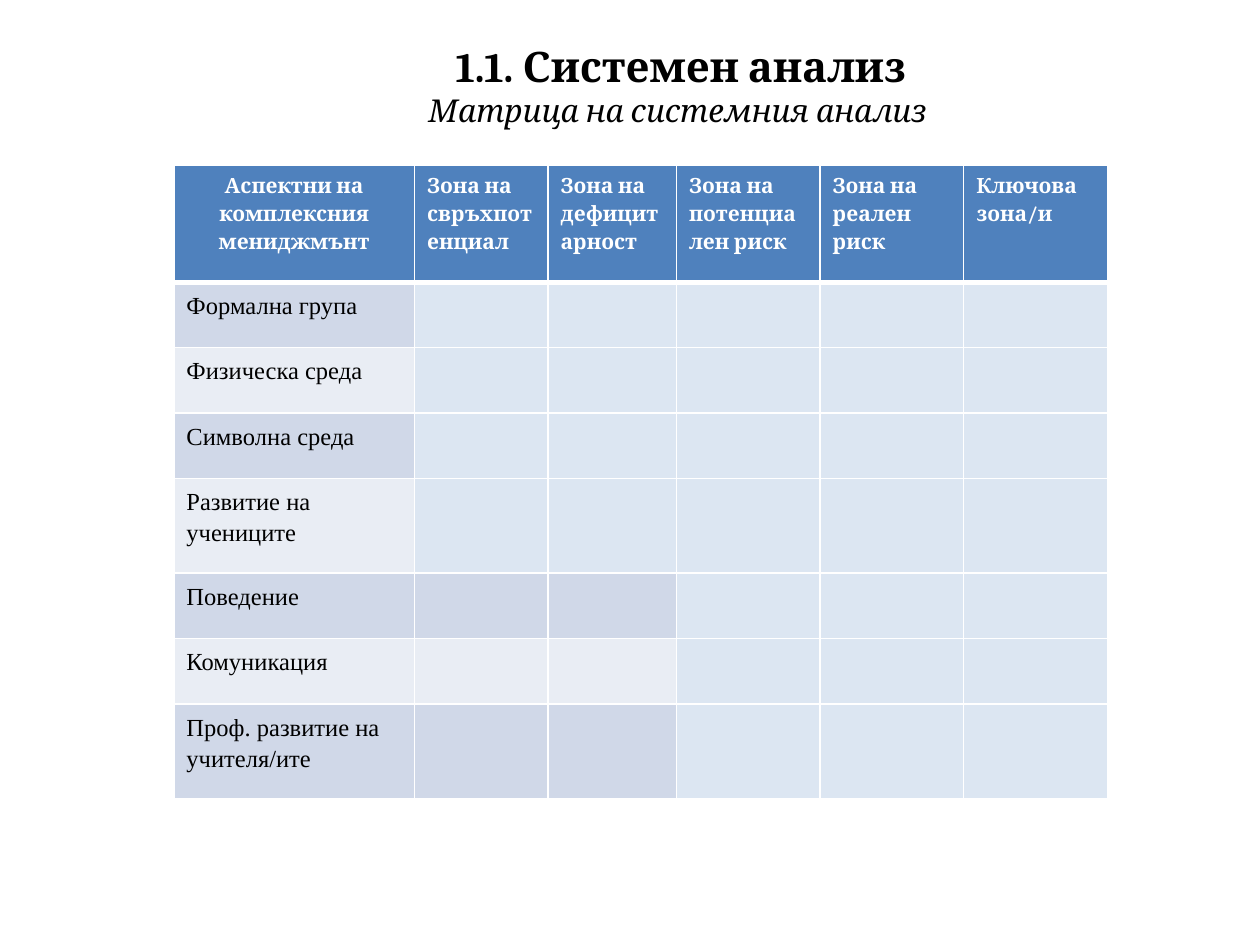
from lxml import etree
from pptx import Presentation
from pptx.dml.color import RGBColor
from pptx.enum import text
from pptx.oxml.ns import qn
from pptx.util import Inches, Pt

HEADS = ["Аспектни на комплексния мениджмънт", "Зона на свръхпотенциал",
         "Зона на дефицитарност", "Зона на потенциален риск",
         "Зона на реален риск", "Ключова зона/и"]
ASPECTS = ["Формална група", "Физическа среда", "Символна среда",
           "Развитие на\nучениците", "Поведение", "Комуникация",
           "Проф. развитие на учителя/ите"]
WIDTHS = [1.91, 1.06, 1.02, 1.14, 1.14, 1.14]
HEIGHTS = [0.93, 0.52, 0.52, 0.52, 0.75, 0.52, 0.52, 0.75]
BLUE, ZONE, BANDS = "4F81BD", "DCE6F2", ["D0D8E8", "E9EDF4"]
WHITE, BLACK = "FFFFFF", "000000"


def color(code):
    return RGBColor.from_string(code)


def style(par, face, size, ink, bold=False, italic=False):
    font = par.font
    font.name, font.size = face, Pt(size)
    font.bold, font.italic = bold, italic
    font.color.rgb = color(ink)


def border(cell, side, width):
    line = etree.SubElement(cell._tc.get_or_add_tcPr(), qn("a:ln" + side),
                            w=str(Pt(width)))
    fill = etree.SubElement(line, qn("a:solidFill"))
    etree.SubElement(fill, qn("a:srgbClr"), val=WHITE)


def paint(cell, fill, top, base):
    for side, width in zip("LRTB", [1, 1, top, base]):
        border(cell, side, width)
    cell.fill.solid()
    cell.fill.fore_color.rgb = color(fill)


def write(cell, words, *look):
    cell.text = words
    for par in cell.text_frame.paragraphs:
        par.line_spacing = 1.15
        style(par, *look)


def add_title(slide):
    title = slide.shapes.title
    title.left, title.top = Inches(1.85), Inches(0.27)
    title.width, title.height = Inches(6.61), Inches(1.14)
    frame = title.text_frame
    frame.text = "1.1. Системен анализ\nМатрица на системния анализ "
    frame.word_wrap = True
    frame.auto_size = text.MSO_AUTO_SIZE.NONE
    frame.vertical_anchor = text.MSO_ANCHOR.TOP
    head, sub = frame.paragraphs
    style(head, "Cambria", 24, BLACK, True)
    style(sub, "Cambria", 18, BLACK, False, True)
    for par in frame.paragraphs:
        par.alignment = text.PP_ALIGN.CENTER
        props = par._p.get_or_add_pPr()
        props.set("marL", "0")
        props.set("indent", str(Inches(0.5)))


def add_matrix(slide):
    table = slide.shapes.add_table(
        len(HEIGHTS), len(WIDTHS), Inches(1.38), Inches(1.31),
        Inches(sum(WIDTHS)), Inches(sum(HEIGHTS))).table
    for col, width in zip(table.columns, WIDTHS):
        col.width = Inches(width)
    for row, height in zip(table.rows, HEIGHTS):
        row.height = Inches(height)

    # Header row
    for col, words in enumerate(HEADS):
        cell = table.cell(0, col)
        write(cell, words, "Cambria", 12, WHITE, True)
        paint(cell, BLUE, 1, 3)
    table.cell(0, 0).text_frame.paragraphs[0].alignment = text.PP_ALIGN.CENTER

    # Aspect rows: the banding reaches three columns from the fifth row on
    for row, words in enumerate(ASPECTS, 1):
        write(table.cell(row, 0), words, "Times New Roman", 14, BLACK)
        banded = 3 if row >= 5 else 1
        for col in range(len(WIDTHS)):
            fill = BANDS[(row - 1) % 2] if col < banded else ZONE
            paint(table.cell(row, col), fill, 3 if row == 1 else 1, 1)


def main():
    deck = Presentation()
    deck.slide_width, deck.slide_height = Inches(10), Inches(7.5)
    slide = deck.slides.add_slide(deck.slide_layouts[5])
    add_title(slide)
    add_matrix(slide)
    deck.save("out.pptx")


if __name__ == "__main__":
    main()
